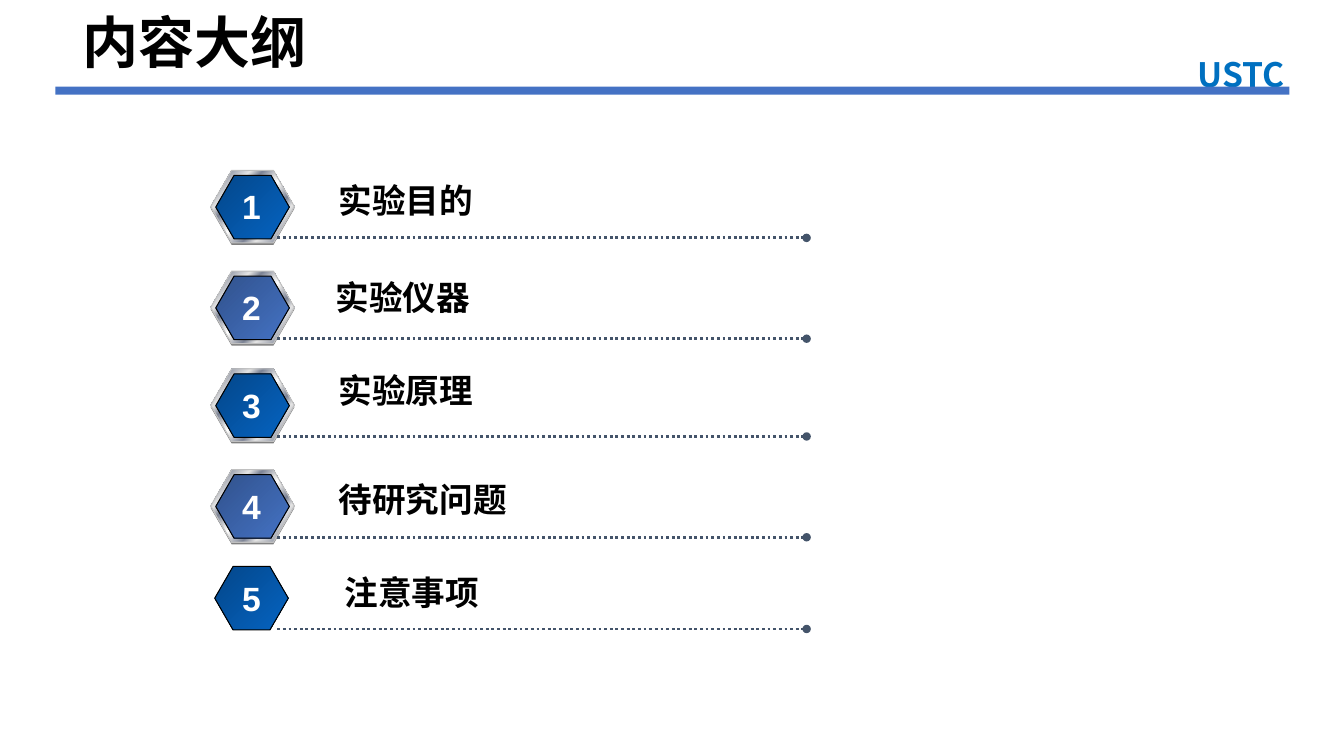
from lxml import etree
from pptx import Presentation
from pptx import util as u
from pptx.dml import color
from pptx.enum import dml, shapes, text
from pptx.oxml import ns

CJK_FONT = "Noto Sans CJK SC"
METAL = [(0, "E6E6E6"), (8, "7D8496"), (26, "E6E6E6"), (34, "7D8496"), (46, "E6E6E6"), (50, "FFFFFF"),
         (54, "E6E6E6"), (66, "7D8496"), (74, "E6E6E6"), (92, "7D8496"), (100, "E6E6E6")]
BLUE = [(0, "04478A"), (100, "0563C1")]
INDIGO = [(0, "31528C"), (100, "4472C4")]


def add_text(container, words, left, top, width, height, size=24, font=CJK_FONT,
             fill="000000", centered=False, wrap=False):
    box = container.add_textbox(u.Inches(left), u.Inches(top), u.Inches(width), u.Inches(height))
    frame = box.text_frame
    frame.text = words
    frame.word_wrap = wrap
    frame.auto_size = text.MSO_AUTO_SIZE.SHAPE_TO_FIT_TEXT
    paragraph = frame.paragraphs[0]
    if centered:
        paragraph.alignment = text.PP_ALIGN.CENTER
    run = paragraph.runs[0]
    run.font.size = u.Pt(size)
    run.font.bold = True
    run.font.name = font
    run.font.color.rgb = color.RGBColor.from_string(fill)
    etree.SubElement(run.font._element, ns.qn("a:ea"), typeface=CJK_FONT)
    return run


def add_hexagon(container, left, top, width, height, stops, outline=None):
    hexagon = container.add_shape(shapes.MSO_SHAPE.HEXAGON, u.Inches(left), u.Inches(top),
                                  u.Inches(width), u.Inches(height))
    hexagon.shadow.inherit = False
    hexagon.adjustments[0] = 0.289
    if len(stops) == 1:
        hexagon.fill.solid()
        hexagon.fill.fore_color.rgb = color.RGBColor.from_string(stops[0][1])
    else:
        hexagon.fill.gradient()
        hexagon.fill.gradient_angle = 315
        stop_list = hexagon._element.spPr.find(".//" + ns.qn("a:gsLst"))
        for stop in list(stop_list):
            stop_list.remove(stop)
        for position, shade in stops:
            stop = etree.SubElement(stop_list, ns.qn("a:gs"), pos=str(position * 1000))
            etree.SubElement(stop, ns.qn("a:srgbClr"), val=shade)
    if outline:
        hexagon.line.color.rgb = color.RGBColor.from_string(outline)
        hexagon.line.width = u.Pt(0.75)
    else:
        hexagon.line.fill.background()


presentation = Presentation()
presentation.slide_width = u.Inches(13.33)
presentation.slide_height = u.Inches(7.5)
slide = presentation.slides.add_slide(presentation.slide_layouts[6])

school = add_text(slide.shapes, "USTC", 11.29, 0.49, 2.04, 0.5, fill="0070C0", centered=True, wrap=True)
school_outline = etree.Element(ns.qn("a:ln"), w=str(u.Pt(0.75)))
outline_fill = etree.SubElement(school_outline, ns.qn("a:solidFill"))
etree.SubElement(outline_fill, ns.qn("a:srgbClr"), val="FFFFFF")
school.font._element.insert(0, school_outline)

title_bar = slide.shapes.add_shape(shapes.MSO_SHAPE.RECTANGLE, u.Inches(0.55), u.Inches(0.86),
                                   u.Inches(12.24), u.Inches(0.08))
title_bar.shadow.inherit = False
title_bar.fill.solid()
title_bar.fill.fore_color.rgb = color.RGBColor.from_string("4472C4")
title_bar.line.fill.background()
add_text(slide.shapes, "内容大纲", 0.72, 0.03, 2.6, 0.77, size=40, wrap=True)

topics = [
    ("实验目的", 1.74, 3.26, 1.74, 1.65, "Arial"),
    ("实验仪器", 2.74, 3.23, 2.7, 1.56, CJK_FONT),
    ("实验原理", 3.71, 3.26, 3.62, 1.56, CJK_FONT),
    ("待研究问题", 4.71, 3.26, 4.7, 1.89, CJK_FONT),
    ("注意事项", 5.62, 3.32, 5.62, 1.56, CJK_FONT),
]
for number, (topic, top, label_left, label_top, label_width, label_font) in enumerate(topics, 1):
    row = slide.shapes.add_group_shape().shapes
    framed = number < len(topics)
    if framed:
        add_hexagon(row, 2.09, top - 0.03, 0.83, 0.72, [(0, "808080")])
        add_hexagon(row, 2.09, top - 0.05, 0.83, 0.72, METAL, "C0C0C0")
    add_hexagon(row, 2.14 if framed else 2.13, top, 0.73, 0.63, BLUE if number % 2 else INDIGO, "000000")

    line_top = u.Inches(top + 0.62)
    rule = row.add_connector(shapes.MSO_CONNECTOR.STRAIGHT, u.Inches(2.75), line_top, u.Inches(8), line_top)
    rule.line.color.rgb = color.RGBColor.from_string("44546A")
    rule.line.width = u.Pt(2)
    rule.line.dash_style = dml.MSO_LINE.ROUND_DOT
    etree.SubElement(rule.line._get_or_add_ln(), ns.qn("a:tailEnd"), type="oval")
    etree.SubElement(rule._element.spPr, ns.qn("a:effectLst"))

    add_text(row, topic, label_left, label_top, label_width, 0.51, font=label_font)
    add_text(row, str(number), 2.3, top + 0.06, 0.39, 0.5, font="Arial", fill="FFFFFF", centered=True)

presentation.save("out.pptx")
